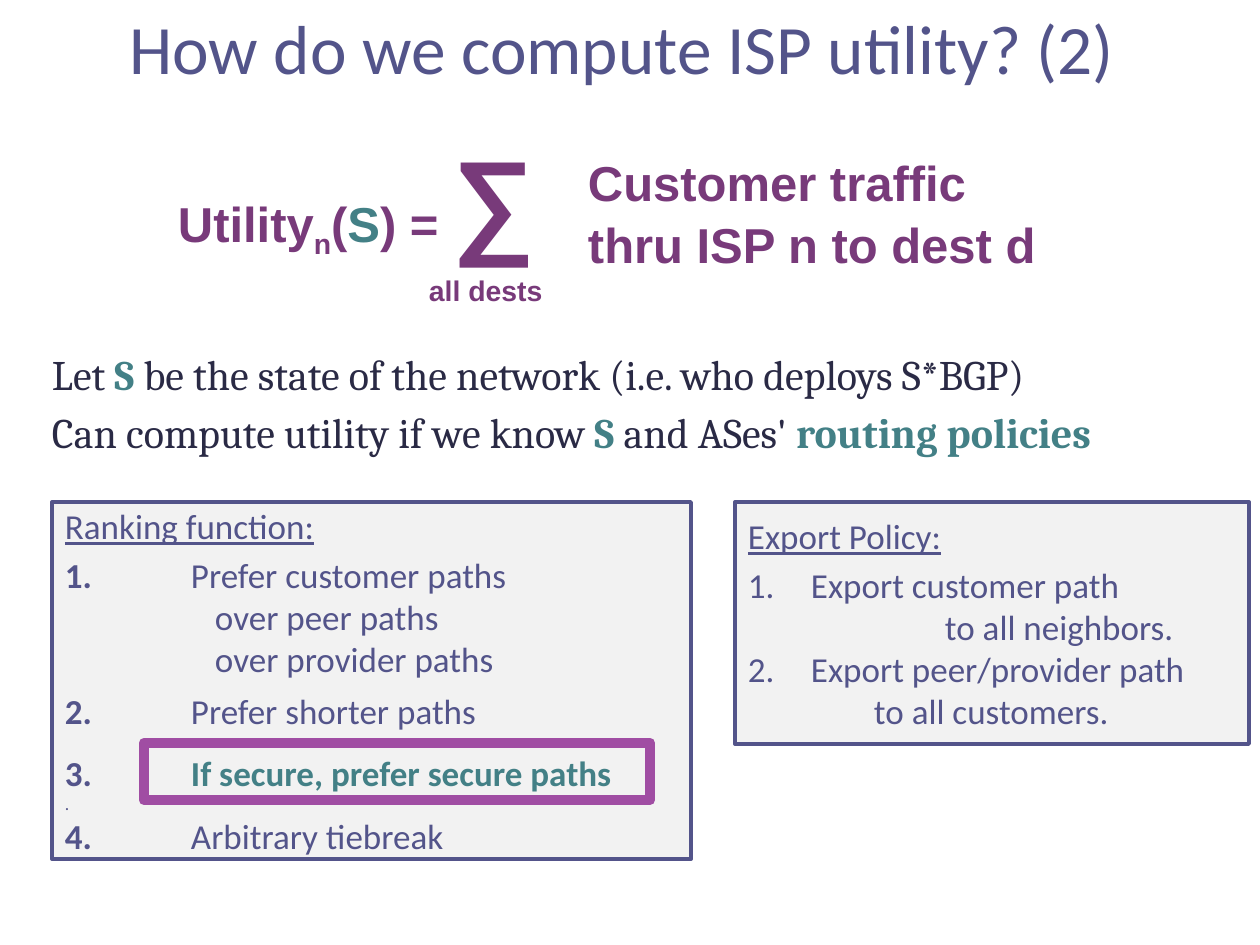
from lxml.etree import SubElement
from pptx import Presentation
from pptx.dml.color import RGBColor
from pptx.enum.shapes import MSO_SHAPE
from pptx.enum.text import MSO_ANCHOR, PP_ALIGN
from pptx.oxml.ns import qn
from pptx.util import Pt

EMU_PER_PX = 914400 / 126
COLORS = {
    "indigo": "53548A",
    "navy": "2A2A45",
    "teal": "438086",
    "plum": "783A7A",
    "violet": "A04DA3",
    "panel": "F2F2F2",
}


def px(length):
    return round(length * EMU_PER_PX)


def rgb(name):
    return RGBColor.from_string(COLORS[name])


class UtilitySlide:
    """Holds the current slide and the style of its text and boxes."""

    def __init__(self, slide):
        self.shapes = slide.shapes

    def fill_frame(self, frame, paragraphs, font, size, color, bold=False, anchor=MSO_ANCHOR.TOP):
        frame.word_wrap = True
        frame.vertical_anchor = anchor
        frame.margin_left = frame.margin_right = px(13)
        frame.margin_top = frame.margin_bottom = px(6)
        for index, (runs, layout) in enumerate(paragraphs):
            paragraph = frame.paragraphs[0] if index == 0 else frame.add_paragraph()
            self.lay_out(paragraph, **layout)
            for text, *style in runs:
                run_style = {"font": font, "size": size, "color": color, "bold": bold}
                run_style.update(style[0] if style else {})
                self.add_run(paragraph, text, **run_style)

    def lay_out(self, paragraph, align=PP_ALIGN.LEFT, before=0, left=0, hang=0, number=None):
        paragraph.alignment = align
        paragraph.space_before = Pt(before)
        properties = paragraph._p.get_or_add_pPr()
        properties.set("marL", str(px(left)))
        properties.set("indent", str(-px(hang)))
        if number:
            SubElement(properties, qn("a:buFont"), typeface="+mj-lt")
            SubElement(properties, qn("a:buAutoNum"), type="arabicPeriod", startAt=str(number))

    def add_run(self, paragraph, text, font, size, color, bold, underline=False, baseline=0):
        run = paragraph.add_run()
        run.text = text
        run.font.name = font
        run.font.size = Pt(size)
        run.font.bold = bold
        run.font.underline = underline
        run.font.color.rgb = rgb(color)
        if baseline:
            run._r.get_or_add_rPr().set("baseline", str(baseline * 1000))

    def text(self, box, paragraphs, **style):
        self.fill_frame(self.shapes.add_textbox(*map(px, box)).text_frame, paragraphs, **style)

    def rectangle(self, box, line, width, fill=None):
        rectangle = self.shapes.add_shape(MSO_SHAPE.RECTANGLE, *map(px, box))
        rectangle.shadow.inherit = False
        rectangle.line.color.rgb = rgb(line)
        rectangle.line.width = Pt(width)
        if fill:
            rectangle.fill.solid()
            rectangle.fill.fore_color.rgb = rgb(fill)
        else:
            rectangle.fill.background()
        return rectangle

    def panel(self, box, paragraphs):
        panel = self.rectangle(box, "indigo", 2.25, "panel")
        self.fill_frame(panel.text_frame, paragraphs, font="Calibri", size=20,
                        color="indigo", anchor=MSO_ANCHOR.MIDDLE)


def main():
    presentation = Presentation()
    presentation.slide_width, presentation.slide_height = px(1260), px(945)
    page = UtilitySlide(presentation.slides.add_slide(presentation.slide_layouts[6]))

    teal, strong = {"color": "teal"}, {"bold": True}
    strong_teal = teal | strong
    heading = {"underline": True}
    formula = {"font": "Arial", "size": 28, "color": "plum", "bold": True}
    ranked = {"left": 126, "hang": 126}
    ranked_more = {"left": 150}
    numbered = {"left": 63, "hang": 63}

    page.text((0, 0, 1260, 94),
              [([("How do we compute ISP utility? (2) ",)], {"align": PP_ALIGN.CENTER})],
              font="Calibri", size=39.6, color="indigo", anchor=MSO_ANCHOR.MIDDLE)

    page.text((575, 147, 538, 131),
              [([("Customer traffic",)], {}), ([("thru ISP n to dest d",)], {"before": 1.5})],
              **formula)
    page.text((165, 121, 420, 152), [([
        ("Utility",), ("n", {"baseline": -25}), ("(",), ("S", teal),
        (") = ",), ("∑", {"size": 66}),
    ], {})], **formula)
    page.text((416, 234, 175, 72), [([("all dests", {"baseline": -25})], {})], **formula)

    page.text((39, 342, 1213, 130), [
        ([("Let ",), ("S ", strong_teal),
          ("be the state of the network (i.e. who deploys S*BGP)",)], {}),
        ([("Can compute utility if we know ",), ("S ", strong_teal),
          ("and ASes' ",), ("routing policies", strong_teal)], {"before": 4.8}),
    ], font="Cambria", size=24, color="navy")

    page.panel((52, 502, 639, 357), [
        ([("Ranking function:", heading)], {}),
        ([("1.\t", strong), ("Prefer customer paths",)], ranked | {"before": 3.7}),
        ([("over peer paths",)], ranked_more),
        ([("over provider paths",)], ranked_more),
        ([("2.", strong), ("\tPrefer shorter paths",)], ranked | {"before": 6.1}),
        ([("3.\t", strong), ("If secure, prefer secure paths", strong_teal)],
         ranked | {"before": 11}),
        ([(".", {"size": 10})], {}),
        ([("4.", strong), ("\tArbitrary tiebreak",)], ranked),
    ])
    page.panel((735, 502, 514, 242), [
        ([("Export Policy:", heading)], {}),
        ([("Export customer path",)], numbered | {"before": 3.7, "number": 1}),
        ([("to all neighbors.",)], {"left": 197}),
        ([("Export peer/provider path",)], numbered | {"number": 2}),
        ([("to all customers.",)], {"left": 126}),
    ])
    page.rectangle((144, 743, 506, 57), "violet", 6)

    presentation.save("out.pptx")


if __name__ == "__main__":
    main()
